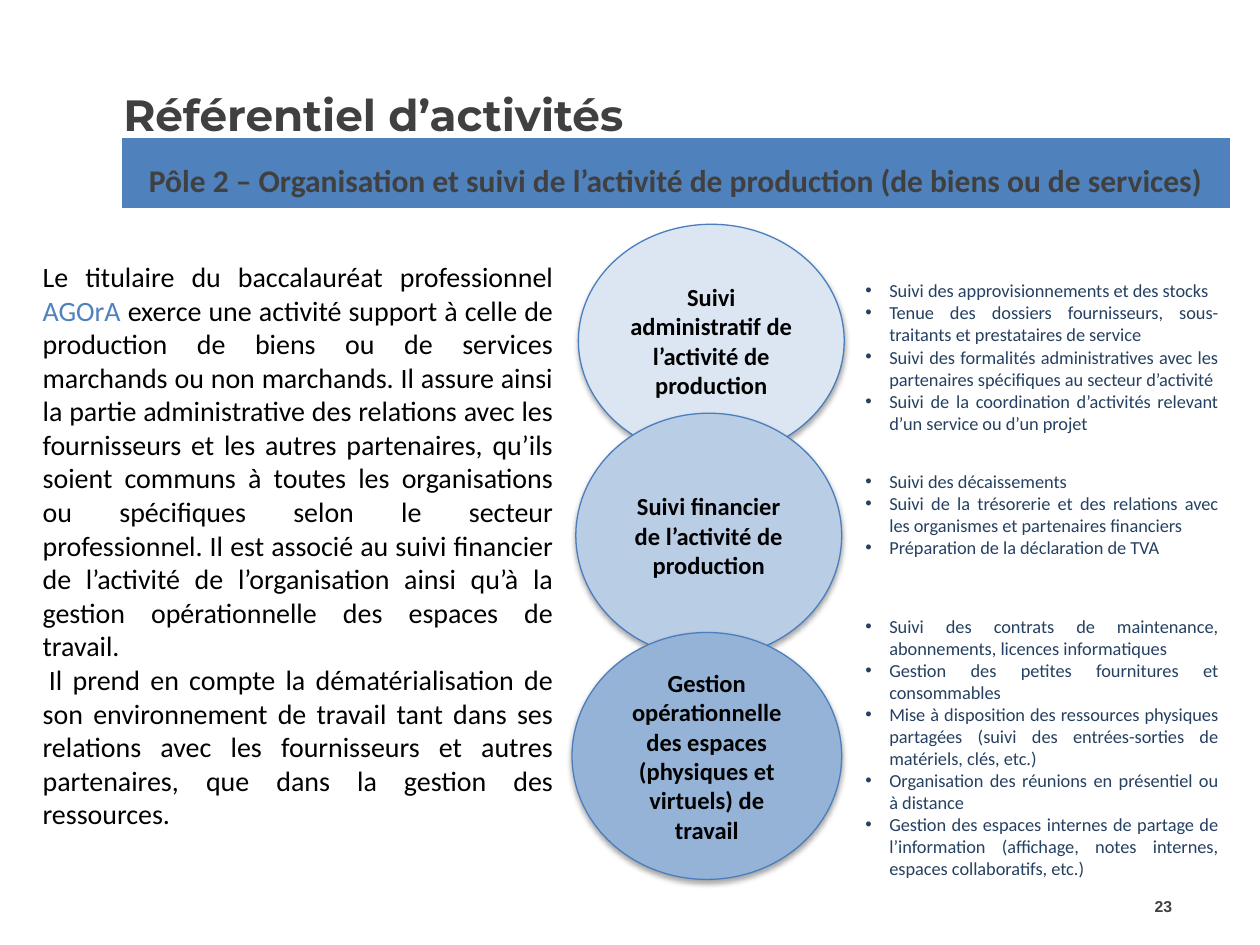
from dataclasses import dataclass

from lxml import etree
from pptx import Presentation
from pptx.dml.color import RGBColor
from pptx.enum.shapes import MSO_SHAPE
from pptx.enum.text import MSO_ANCHOR, PP_ALIGN
from pptx.oxml import parse_xml
from pptx.oxml.ns import nsdecls, qn
from pptx.util import Inches, Pt

LEFT, CENTER, RIGHT, JUSTIFY = PP_ALIGN.LEFT, PP_ALIGN.CENTER, PP_ALIGN.RIGHT, PP_ALIGN.JUSTIFY
TOP, MIDDLE = MSO_ANCHOR.TOP, MSO_ANCHOR.MIDDLE
OVAL = MSO_SHAPE.OVAL


@dataclass(frozen=True)
class Style:
    size: float
    color: str
    font: str = "Calibri"
    bold: bool = False


@dataclass(frozen=True)
class Theme:
    accent: str = "4F81BD"
    outline: str = "4B7EBC"
    border: str = "FFFFFF"
    title: Style = Style(25, "404040", "Montserrat", True)
    banner: Style = Style(18, "404040", bold=True)
    body: Style = Style(16, "000000")
    highlight: Style = Style(16, "4F81BD")
    circle: Style = Style(14, "000000", bold=True)
    bullet: Style = Style(10.5, "254061")
    number: Style = Style(9, "404040", "Arial", True)


@dataclass(frozen=True)
class Box:
    left: float
    top: float
    width: float
    height: float

    def lengths(self) -> list:
        return [Inches(v) for v in (self.left, self.top, self.width, self.height)]


@dataclass(frozen=True)
class Activity:
    name: str
    fill: str
    circle: Box
    tasks_box: Box
    tasks: tuple


THEME = Theme()
BULLET_INDENT = 0.19

ACTIVITIES = (
    Activity(
        "Suivi administratif de l’activité de production", "DCE6F2",
        Box(4.59, 1.78, 2.11, 1.85), Box(6.77, 2.17, 3, 1.34),
        ("Suivi des approvisionnements et des stocks",
         "Tenue des dossiers fournisseurs, sous-traitants et prestataires de service",
         "Suivi des formalités administratives avec les partenaires spécifiques au secteur d’activité",
         "Suivi de la coordination d’activités relevant d’un service ou d’un projet")),
    Activity(
        "Suivi financier de l’activité de production", "B9CDE5",
        Box(4.57, 3.28, 2.11, 1.94), Box(6.77, 3.68, 3, 0.98),
        ("Suivi des décaissements",
         "Suivi de la trésorerie et des relations avec les organismes et partenaires financiers",
         "Préparation de la déclaration de TVA")),
    Activity(
        "Gestion opérationnelle des espaces (physiques et virtuels) de travail", "95B3D7",
        Box(4.54, 5.02, 2.14, 1.96), Box(6.77, 4.83, 3, 2.22),
        ("Suivi des contrats de maintenance, abonnements, licences informatiques",
         "Gestion des petites fournitures et consommables",
         "Mise à disposition des ressources physiques partagées "
         "(suivi des entrées-sorties de matériels, clés, etc.)",
         "Organisation des réunions en présentiel ou à distance",
         "Gestion des espaces internes de partage de l’information "
         "(affichage, notes internes, espaces collaboratifs, etc.)")),
)

INTRO = (
    (("Le titulaire du baccalauréat professionnel ", THEME.body),
     ("AGOrA ", THEME.highlight),
     ("exerce une activité support à celle de production de biens ou de services marchands "
      "ou non marchands. Il assure ainsi la partie administrative des relations avec les "
      "fournisseurs et les autres partenaires, qu’ils soient communs à toutes les organisations "
      "ou spécifiques selon le secteur professionnel. Il est associé au suivi financier de "
      "l’activité de l’organisation ainsi qu’à la gestion opérationnelle des espaces de travail.",
      THEME.body)),
    (("Il prend en compte la dématérialisation de son environnement de travail tant dans ses "
      "relations avec les fournisseurs et autres partenaires, que dans la gestion des ressources.",
      THEME.body),),
)


def rgb(value: str) -> RGBColor:
    return RGBColor.from_string(value)


def add_run(p, text: str, style: Style) -> None:
    r = p.add_run()
    r.text = text
    formats = {"size": Pt(style.size), "name": style.font, "bold": style.bold}
    for name, value in formats.items():
        setattr(r.font, name, value)
    r.font.color.rgb = rgb(style.color)


def write(tf, paragraphs, align, anchor=TOP) -> list:
    """Fill a text frame; each paragraph is a sequence of (text, style) runs."""
    for name, value in {"word_wrap": True, "vertical_anchor": anchor}.items():
        setattr(tf, name, value)
    for i, runs in enumerate(paragraphs):
        p = tf.add_paragraph() if i else tf.paragraphs[0]
        p.alignment = align
        for text, style in runs:
            add_run(p, text, style)
    return list(tf.paragraphs)


def add_text(s, box: Box, paragraphs, align=LEFT, anchor=TOP) -> list:
    return write(s.shapes.add_textbox(*box.lengths()).text_frame, paragraphs, align, anchor)


def indent(p, margin: float, first: float) -> None:
    pPr = p._p.get_or_add_pPr()
    pPr.set("marL", str(Inches(margin)))
    pPr.set("indent", str(Inches(first)))


def add_tasks(s, box: Box, tasks) -> None:
    for p in add_text(s, box, [[(task, THEME.bullet)] for task in tasks], JUSTIFY):
        indent(p, BULLET_INDENT, -BULLET_INDENT)
        pPr = p._p.get_or_add_pPr()
        etree.SubElement(pPr, qn("a:buFont")).set("typeface", "Arial")
        etree.SubElement(pPr, qn("a:buChar")).set("char", "•")


def add_circle(s, box: Box, fill: str, label: str) -> None:
    sp = s.shapes.add_shape(OVAL, *box.lengths())
    sp.fill.solid()
    sp.fill.fore_color.rgb = rgb(fill)
    sp.line.color.rgb = rgb(THEME.outline)
    sp.line.width = Pt(0.75)
    sp.shadow.inherit = False
    sp._element.spPr.find(qn("a:effectLst")).append(parse_xml(
        f'<a:outerShdw {nsdecls("a")} blurRad="{Pt(3.1)}" dist="{Pt(1.8)}" dir="5400000" '
        'rotWithShape="0"><a:srgbClr val="000000"><a:alpha val="35000"/></a:srgbClr></a:outerShdw>'))
    write(sp.text_frame, [[(label, THEME.circle)]], CENTER, MIDDLE)


def add_banner(s, box: Box, text: str) -> None:
    table = s.shapes.add_table(1, 1, *box.lengths()).table
    cell = table.cell(0, 0)
    margins = {"margin_left": 0, "margin_right": 0, "margin_top": Inches(0.21), "margin_bottom": 0}
    for name, value in margins.items():
        setattr(cell, name, value)
    tcPr = cell._tc.get_or_add_tcPr()
    for side, width in {"L": 1, "R": 1, "T": 3, "B": 3}.items():
        tcPr.append(parse_xml(
            f'<a:ln{side} {nsdecls("a")} w="{Pt(width)}"><a:solidFill>'
            f'<a:srgbClr val="{THEME.border}"/></a:solidFill></a:ln{side}>'))
    cell.fill.solid()
    cell.fill.fore_color.rgb = rgb(THEME.accent)
    p = cell.text_frame.paragraphs[0]
    p.alignment = CENTER
    add_run(p, text, THEME.banner)


def main() -> None:
    prs = Presentation()
    prs.slide_width, prs.slide_height = Inches(10), Inches(7.5)
    s = prs.slides.add_slide(prs.slide_layouts[6])

    # Title, slide number and banner
    add_text(s, Box(0.88, 0.2, 8.62, 1.41), [[("Référentiel d’activités", THEME.title)]], anchor=MIDDLE)
    add_text(s, Box(8.91, 6.99, 0.49, 0.4), [[("23", THEME.number)]], RIGHT, MIDDLE)
    add_banner(s, Box(0.96, 1.08, 8.81, 0.59),
               "Pôle 2 – Organisation et suivi de l’activité de production (de biens ou de services)")

    # Introduction
    intro = add_text(s, Box(0.24, 2.01, 4.25, 4.68), INTRO, JUSTIFY)
    indent(intro[1], 0, 0.05)

    # Activities and their tasks
    for activity in ACTIVITIES:
        add_circle(s, activity.circle, activity.fill, activity.name)
    for activity in ACTIVITIES:
        add_tasks(s, activity.tasks_box, activity.tasks)

    prs.save("out.pptx")


if __name__ == "__main__":
    main()
